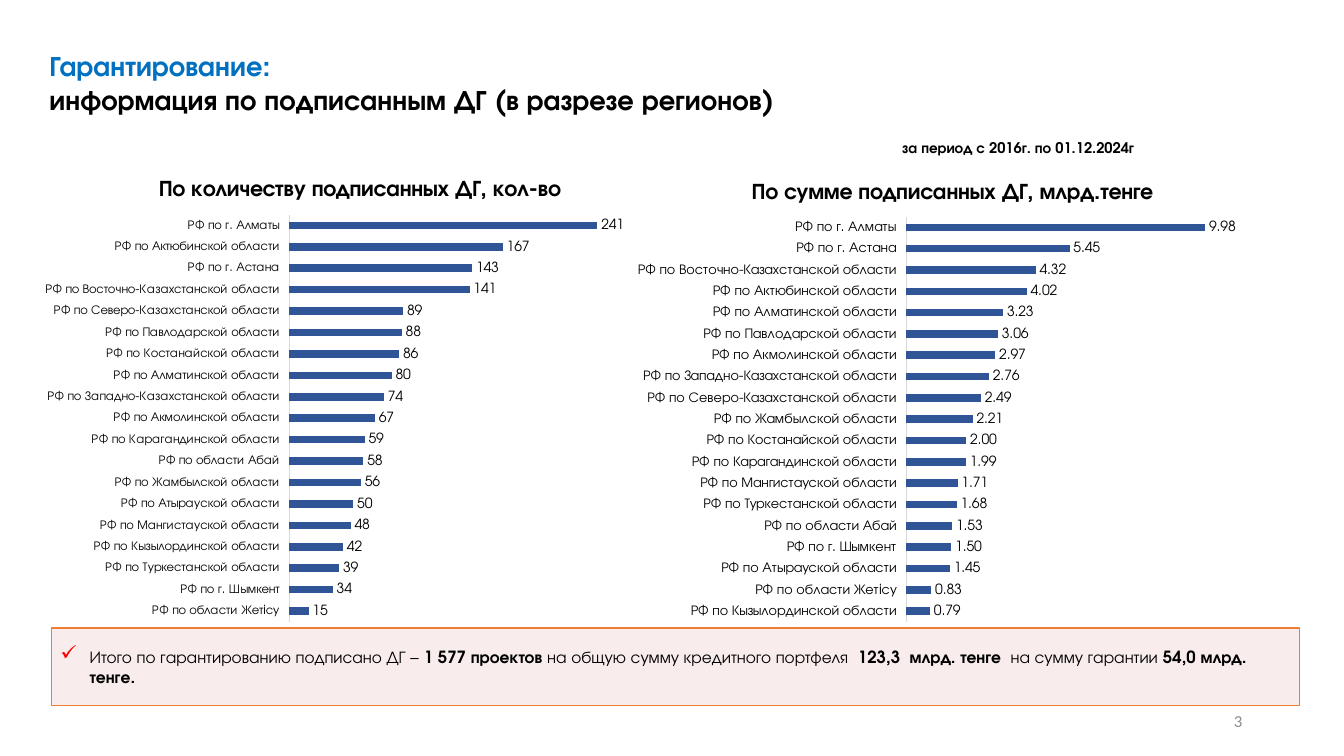
from lxml import etree
from pptx import Presentation
from pptx.chart.data import CategoryChartData
from pptx.dml.color import RGBColor
from pptx.enum.chart import XL_CHART_TYPE, XL_LABEL_POSITION, XL_TICK_LABEL_POSITION, XL_TICK_MARK
from pptx.enum.shapes import MSO_SHAPE
from pptx.enum.text import MSO_ANCHOR, MSO_AUTO_SIZE, PP_ALIGN
from pptx.oxml import parse_xml
from pptx.oxml.ns import nsdecls, qn
from pptx.util import Inches, Pt

BAR = XL_CHART_TYPE.BAR_CLUSTERED
OUTSIDE = XL_LABEL_POSITION.OUTSIDE_END
LOW = XL_TICK_LABEL_POSITION.LOW
NO_TICK = XL_TICK_MARK.NONE
RECTANGLE = MSO_SHAPE.RECTANGLE
TOP, MIDDLE = MSO_ANCHOR.TOP, MSO_ANCHOR.MIDDLE
LEFT, RIGHT = PP_ALIGN.LEFT, PP_ALIGN.RIGHT
NO_FIT = MSO_AUTO_SIZE.NONE

FONT = "TeX Gyre Adventor"
BLACK, BLUE, BAR_BLUE = "000000", "0070C0", "2F5597"

HEADING = [("Гарантирование: ", BLUE),
           ("информация по подписанным ДГ (в разрезе регионов)", BLACK)]
PERIOD = "за период с 2016г. по 01.12.2024г"
PAGE = "3"
TOTALS = [("Итого по гарантированию подписано ДГ – ", False),
          ("1 577 проектов ", True),
          ("на общую сумму кредитного портфеля  ", False),
          ("123,3  млрд. тенге  ", True),
          ("на сумму гарантии", False),
          (" 54,0 млрд. тенге.", True)]

COUNTS = [
    ("области Жетiсу", 15), ("г. Шымкент", 34), ("Туркестанской области", 39),
    ("Кызылординской области", 42), ("Мангистауской области", 48),
    ("Атырауской области", 50), ("Жамбылской области", 56), ("области Абай", 58),
    ("Карагандинской области", 59), ("Акмолинской области", 67),
    ("Западно-Казахстанской области", 74), ("Алматинской области", 80),
    ("Костанайской области", 86), ("Павлодарской области", 88),
    ("Северо-Казахстанской области", 89), ("Восточно-Казахстанской области", 141),
    ("г. Астана", 143), ("Актюбинской области", 167), ("г. Алматы", 241),
]
SUMS = [
    ("Кызылординской области", 0.79), ("области Жетiсу", 0.83),
    ("Атырауской области", 1.45), ("г. Шымкент", 1.5), ("области Абай", 1.53),
    ("Туркестанской области", 1.68), ("Мангистауской области", 1.71),
    ("Карагандинской области", 1.99), ("Костанайской области", 2),
    ("Жамбылской области", 2.21), ("Северо-Казахстанской области", 2.49),
    ("Западно-Казахстанской области", 2.76), ("Акмолинской области", 2.97),
    ("Павлодарской области", 3.06), ("Алматинской области", 3.23),
    ("Актюбинской области", 4.02), ("Восточно-Казахстанской области", 4.32),
    ("г. Астана", 5.45), ("г. Алматы", 9.98),
]
CHARTS = [
    dict(title="По количеству подписанных ДГ, кол-во", regions=COUNTS,
         box=(0.38, 1.58, 6.42, 4.69), plot=(2.87, 2.13, 3.17, 4.04),
         top_value=250, region_size=9, number_format="General"),
    dict(title="По сумме подписанных ДГ, млрд.тенге", regions=SUMS,
         box=(6.26, 1.61, 6.42, 4.67), plot=(8.99, 2.15, 2.97, 4.02),
         top_value=10, region_size=10, number_format="#,##0.00"),
]


def color(hex_value):
    return RGBColor.from_string(hex_value)


def style(font, size, hex_value=BLACK, bold=False, name=FONT):
    font.name, font.size, font.bold = name, Pt(size), bold
    font.color.rgb = color(hex_value)


def add_label(slide, box, text, size, **look):
    label = slide.shapes.add_textbox(*map(Inches, box))
    label.text_frame.text = text
    style(label.text_frame.paragraphs[0].runs[0].font, size, **look)
    return label.text_frame


def set_layout(parent, index, **values):
    for old in parent.findall(qn("c:layout")):
        parent.remove(old)
    layout = etree.Element(qn("c:layout"))
    manual = etree.SubElement(layout, qn("c:manualLayout"))
    for tag, value in values.items():
        etree.SubElement(manual, qn("c:" + tag)).set("val", str(value))
    parent.insert(index, layout)


def add_region_chart(slide, title, regions, box, plot, top_value, region_size, number_format):
    data = CategoryChartData(number_format=number_format)
    data.categories = ["РФ по " + region for region, _ in regions]
    data.add_series("Series 1", [value for _, value in regions])
    chart = slide.shapes.add_chart(BAR, *map(Inches, box), data).chart
    style(chart.font, 10)
    chart.has_legend = False
    chart.has_title = True
    chart.chart_title.text_frame.text = title
    style(chart.chart_title.text_frame.paragraphs[0].runs[0].font, 16, bold=True)

    values = chart.value_axis
    values.minimum_scale, values.maximum_scale = 0, top_value
    values.has_major_gridlines = False
    values.visible = False
    names = chart.category_axis
    names.major_tick_mark = names.minor_tick_mark = NO_TICK
    names.tick_label_position = LOW
    names.format.line.color.rgb = color("D9D9D9")
    names.format.line.width = Pt(0.75)
    style(names.tick_labels.font, region_size)

    bars = chart.plots[0]
    bars.gap_width = 182
    bars.vary_by_categories = False
    bars.series[0].format.fill.solid()
    bars.series[0].format.fill.fore_color.rgb = color(BAR_BLUE)
    bars.has_data_labels = True
    labels = bars.data_labels
    labels.show_value = True
    labels.position = OUTSIDE
    labels.number_format = number_format
    labels.number_format_is_linked = False
    style(labels.font, 10)

    left, top, width, height = box
    space = chart._chartSpace
    set_layout(space.find(".//" + qn("c:plotArea")), 0,
               layoutTarget="inner", xMode="edge", yMode="edge",
               x=(plot[0] - left) / width, y=(plot[1] - top) / height,
               w=plot[2] / width, h=plot[3] / height)
    set_layout(chart.chart_title._element, 1, xMode="edge", yMode="edge", x=0.18, y=0.03)
    space.find(qn("c:chart")).addnext(parse_xml(
        f'<c:spPr {nsdecls("c", "a")}><a:noFill/><a:ln><a:noFill/></a:ln></c:spPr>'))


def add_totals(slide):
    panel = slide.shapes.add_shape(RECTANGLE, *map(Inches, (0.51, 6.23, 12.38, 0.77)))
    panel.shadow.inherit = False
    panel.fill.solid()
    panel.fill.fore_color.rgb = color("F2DCDB")
    tint = panel._element.spPr.find(".//" + qn("a:srgbClr"))
    etree.SubElement(tint, qn("a:alpha")).set("val", "50000")
    panel.line.color.rgb = color("ED7D31")
    panel.line.width = Pt(1)
    frame = panel.text_frame
    frame.word_wrap = True
    frame.vertical_anchor = MIDDLE
    frame.margin_left = frame.margin_right = Inches(0.08)
    frame.margin_top = frame.margin_bottom = Inches(0.04)
    summary = frame.paragraphs[0]
    summary.alignment = LEFT
    summary.space_after = Pt(6)
    props = summary._p.get_or_add_pPr()
    props.set("marL", str(Inches(0.3)))
    props.set("indent", str(Inches(-0.29)))
    bullet_color = etree.SubElement(props, qn("a:buClr"))
    etree.SubElement(bullet_color, qn("a:srgbClr")).set("val", "FF0000")
    etree.SubElement(props, qn("a:buSzPct")).set("val", "125000")
    etree.SubElement(props, qn("a:buChar")).set("char", "✓")
    for text, bold in TOTALS:
        run = summary.add_run()
        run.text = text
        style(run.font, 12, bold=bold)


def main():
    deck = Presentation()
    deck.slide_width, deck.slide_height = Inches(13.33), Inches(7.5)
    slide = deck.slides.add_slide(deck.slide_layouts[5])

    heading = slide.shapes.title
    heading.left, heading.top, heading.width, heading.height = map(
        Inches, (0.39, 0.43, 8.58, 0.77))
    frame = heading.text_frame
    frame.text = "\v".join(text for text, _ in HEADING)
    frame.auto_size = NO_FIT
    frame.word_wrap = True
    frame.vertical_anchor = TOP
    frame.paragraphs[0].alignment = LEFT
    for run, (_, hex_value) in zip(frame.paragraphs[0].runs, HEADING):
        style(run.font, 20, hex_value, bold=True)

    add_label(slide, (8.85, 1.33, 2.64, 0.28), PERIOD, 10.5, bold=True)
    add_totals(slide)
    page = add_label(slide, (9.42, 6.95, 3, 0.4), PAGE, 12, hex_value="8C8C8C", name="Calibri")
    page.word_wrap = True
    page.vertical_anchor = MIDDLE
    page.paragraphs[0].alignment = RIGHT
    for chart in CHARTS:
        add_region_chart(slide, **chart)
    deck.save("out.pptx")


if __name__ == "__main__":
    main()
